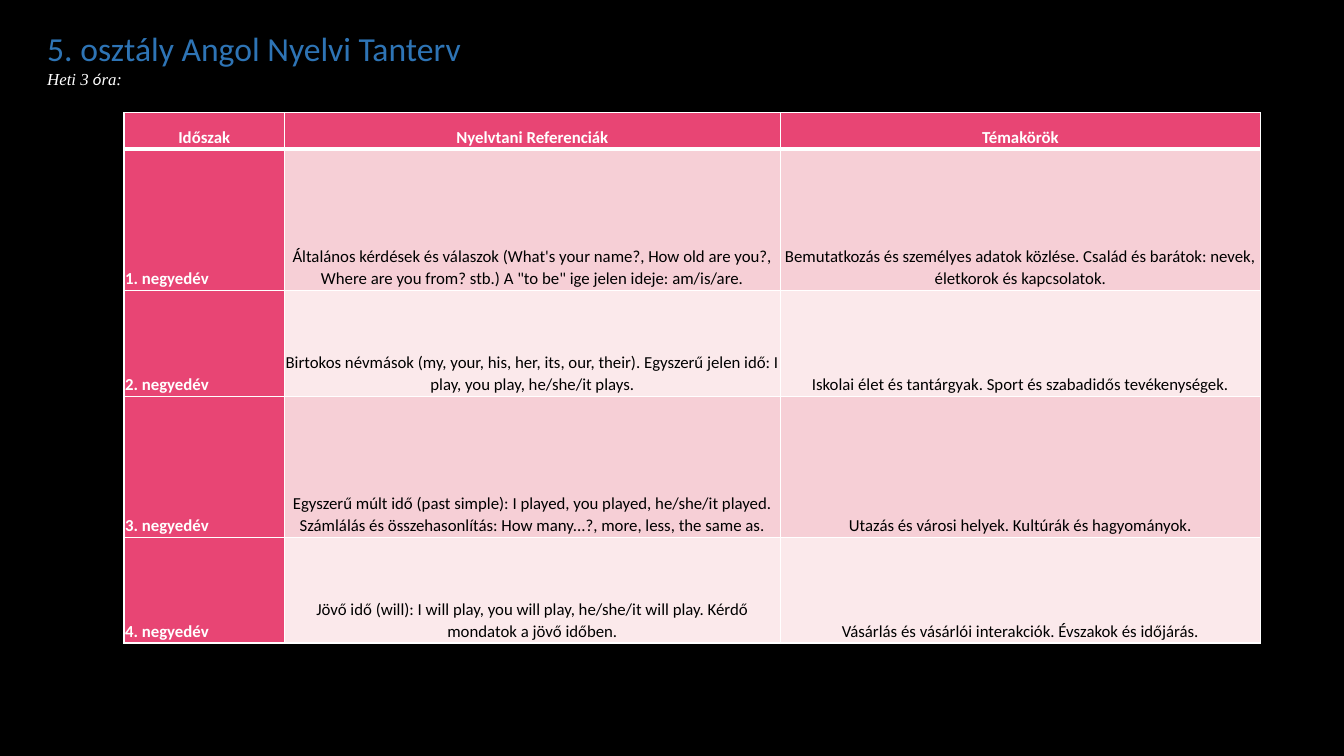
from dataclasses import dataclass

import lxml.etree
import pptx
import pptx.dml.color
import pptx.enum.text
import pptx.oxml.ns
import pptx.presentation
import pptx.slide
import pptx.table
import pptx.text.text
import pptx.util

WIDE, HIGH = pptx.util.Inches(13.33), pptx.util.Inches(7.5)
ROSE, WHITE, BLACK, BLUE = "E84574", "FFFFFF", "000000", "2E74B5"
BANDS = ("F6CFD6", "FBE9EB")
SANS, SERIF = "Calibri", "Times New Roman"
COLS = (11.93, 36.91, 35.71)
ROWS = (4.8, 18.67, 14, 18.67, 14)
ALIGN = pptx.enum.text.PP_ALIGN
ANCHOR = pptx.enum.text.MSO_ANCHOR


@dataclass(frozen=True)
class Term:
    name: str
    grammar: str
    topics: str


@dataclass(frozen=True)
class Style:
    color: str
    size: float = 12
    face: str = SANS
    bold: bool = False
    italic: bool = False


HEAD = Term("Időszak", "Nyelvtani Referenciák", "Témakörök")
TERMS = (
    Term("1. negyedév",
         "Általános kérdések és válaszok (What's your name?, How old are you?, "
         "Where are you from? stb.) A \"to be\" ige jelen ideje: am/is/are.",
         "Bemutatkozás és személyes adatok közlése. Család és barátok: nevek, "
         "életkorok és kapcsolatok."),
    Term("2. negyedév",
         "Birtokos névmások (my, your, his, her, its, our, their). "
         "Egyszerű jelen idő: I play, you play, he/she/it plays.",
         "Iskolai élet és tantárgyak. Sport és szabadidős tevékenységek."),
    Term("3. negyedév",
         "Egyszerű múlt idő (past simple): I played, you played, he/she/it played. "
         "Számlálás és összehasonlítás: How many...?, more, less, the same as.",
         "Utazás és városi helyek. Kultúrák és hagyományok."),
    Term("4. negyedév",
         "Jövő idő (will): I will play, you will play, he/she/it will play. "
         "Kérdő mondatok a jövő időben.",
         "Vásárlás és vásárlói interakciók. Évszakok és időjárás."),
)


def across(share: float) -> int:
    """Turn a percentage of the slide's width into a length."""
    return round(WIDE * share / 100)


def down(share: float) -> int:
    """Turn a percentage of the slide's height into a length."""
    return round(HIGH * share / 100)


def paint(code: str) -> pptx.dml.color.RGBColor:
    return pptx.dml.color.RGBColor.from_string(code)


def format_font(font: pptx.text.text.Font, style: Style) -> None:
    font.name, font.size = style.face, pptx.util.Pt(style.size)
    font.bold, font.italic = style.bold, style.italic
    font.color.rgb = paint(style.color)


def add_borders(cell: pptx.table._Cell, top: float, base: float) -> None:
    props = cell._tc.get_or_add_tcPr()
    for side, width in (("L", 1), ("R", 1), ("T", top), ("B", base)):
        line = lxml.etree.SubElement(
            props, pptx.oxml.ns.qn(f"a:ln{side}"), w=str(pptx.util.Pt(width)))
        fill = lxml.etree.SubElement(line, pptx.oxml.ns.qn("a:solidFill"))
        lxml.etree.SubElement(fill, pptx.oxml.ns.qn("a:srgbClr"), val=WHITE)


def fill_cell(cell: pptx.table._Cell, text: str, row: int, col: int) -> None:
    label = row == 0 or col == 0
    add_borders(cell, top=3 if row == 1 else 1, base=3 if row == 0 else 1)
    cell.fill.solid()
    cell.fill.fore_color.rgb = paint(ROSE if label else BANDS[(row - 1) % 2])
    cell.vertical_anchor = ANCHOR.BOTTOM
    cell.margin_left = cell.margin_right = pptx.util.Inches(0.01)
    cell.margin_top = cell.margin_bottom = pptx.util.Inches(0.01)
    cell.text_frame.text = text
    para = cell.text_frame.paragraphs[0]
    para.alignment = ALIGN.LEFT if row and col == 0 else ALIGN.CENTER
    para.line_spacing = 1.07
    para.space_after = pptx.util.Pt(24)
    format_font(para.runs[0].font, Style(WHITE if label else BLACK, bold=label))


def add_plan(slide: pptx.slide.Slide) -> None:
    table = slide.shapes.add_table(
        len(ROWS), len(COLS), across(9.23), down(14.93),
        across(sum(COLS)), down(sum(ROWS))).table
    for col, share in enumerate(COLS):
        table.columns[col].width = across(share)
    for row, (share, term) in enumerate(zip(ROWS, (HEAD, *TERMS))):
        table.rows[row].height = down(share)
        for col, text in enumerate((term.name, term.grammar, term.topics)):
            fill_cell(table.cell(row, col), text, row, col)


def add_title(slide: pptx.slide.Slide) -> None:
    frame = slide.shapes.add_textbox(
        across(2.78), down(1.47), across(125.96), down(14.4)).text_frame
    frame.word_wrap = True
    frame.vertical_anchor = ANCHOR.TOP
    frame.margin_top, frame.margin_bottom = pptx.util.Inches(0.17), 0
    frame.text = "5. osztály Angol Nyelvi Tanterv"
    format_font(frame.paragraphs[0].runs[0].font, Style(BLUE, 24))
    hours = frame.add_paragraph()
    for text, face in (("Heti 3 ", SERIF), ("ó", SANS), ("ra:", SERIF)):
        run = hours.add_run()
        run.text = text
        format_font(run.font, Style(WHITE, face=face, italic=True))


def main() -> None:
    deck = pptx.Presentation()
    deck.slide_width, deck.slide_height = WIDE, HIGH
    slide = deck.slides.add_slide(deck.slide_layouts[6])
    slide.background.fill.solid()
    slide.background.fill.fore_color.rgb = paint(BLACK)
    add_plan(slide)
    add_title(slide)
    deck.save("out.pptx")


if __name__ == "__main__":
    main()
